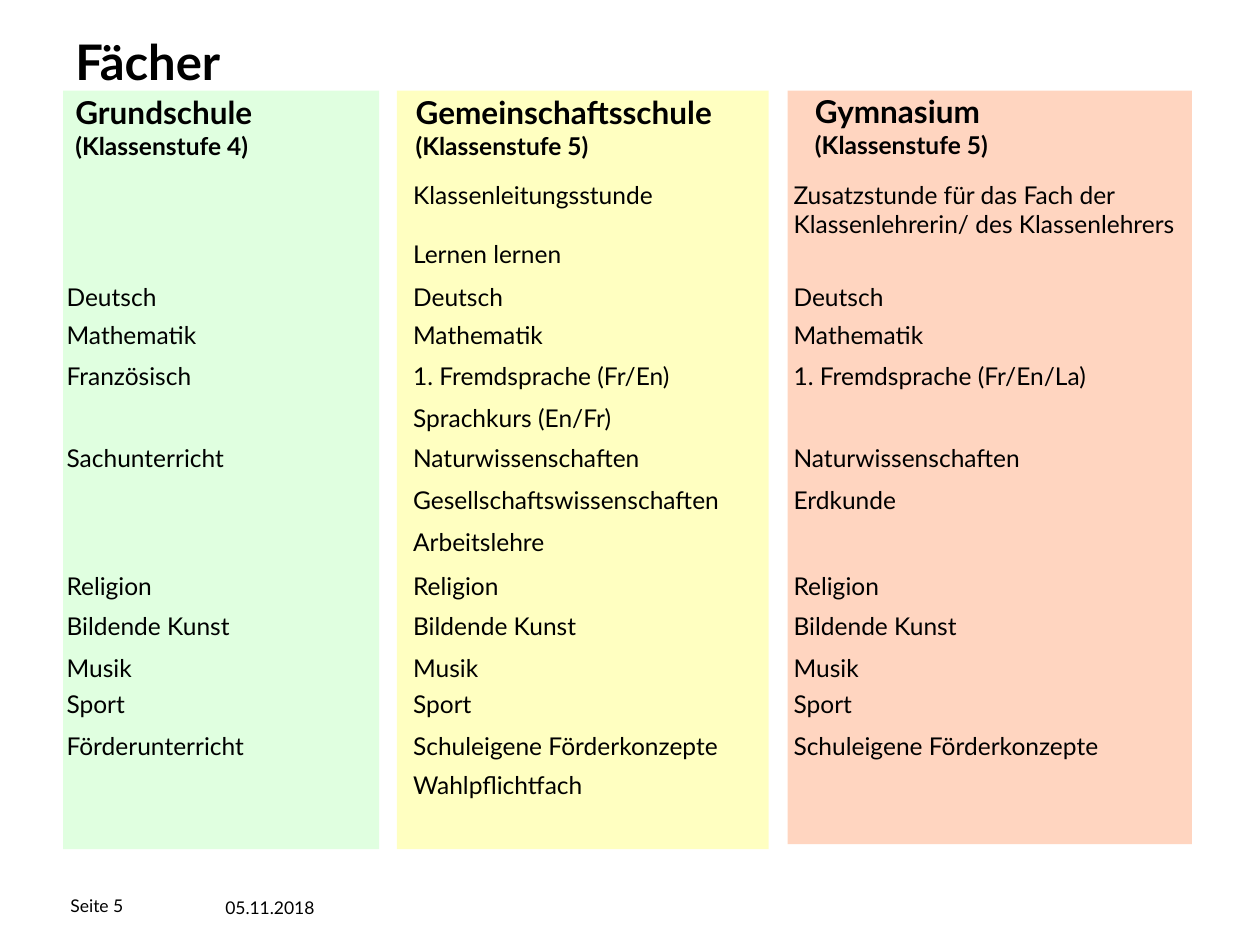
from lxml import etree
from pptx import Presentation
from pptx.dml.color import RGBColor
from pptx.enum.shapes import MSO_SHAPE
from pptx.enum.text import MSO_ANCHOR, MSO_AUTO_SIZE
from pptx.oxml.ns import qn
from pptx.util import Inches, Pt

RECTANGLE = MSO_SHAPE.RECTANGLE
TOP, MIDDLE = MSO_ANCHOR.TOP, MSO_ANCHOR.MIDDLE
FIT_TEXT = MSO_AUTO_SIZE.SHAPE_TO_FIT_TEXT

FONT = "Lato"
BLACK = RGBColor(0x00, 0x00, 0x00)
GREEN = RGBColor(0xCC, 0xFF, 0xCC)
YELLOW = RGBColor(0xFF, 0xFF, 0x99)
ORANGE = RGBColor(0xFF, 0xBA, 0x97)
PANEL_OPACITY = 60

# School, grade, colour, panel (left, top, width, height), heading (left, top, width)
SCHOOLS = [
    ("Grundschule", "(Klassenstufe 4)", GREEN, (0.5, 0.72, 2.51, 6.02), (0.5, 0.69, 1.74)),
    ("Gemeinschaftsschule", "(Klassenstufe 5)", YELLOW, (3.15, 0.72, 2.95, 6.02), (3.2, 0.69, 2.75)),
    ("Gymnasium", "(Klassenstufe 5)", ORANGE, (6.25, 0.72, 3.21, 5.98), (6.37, 0.68, 1.7)),
]

# Left edge and width of the subjects in each column
SUBJECT_COLUMNS = [(0.43, 2.46), (3.18, 3.05), (6.2, 3.3)]

# Top of each row, then the subject in each of the three schools
SUBJECT_ROWS = [
    (1.38, "", "Klassenleitungsstunde",
     "Zusatzstunde für das Fach der\nKlassenlehrerin/ des Klassenlehrers"),
    (1.85, "", "Lernen lernen", ""),
    (2.19, "Deutsch", "Deutsch", "Deutsch"),
    (2.49, "Mathematik", "Mathematik", "Mathematik"),
    (2.82, "Französisch", "1. Fremdsprache (Fr/En)", "1. Fremdsprache (Fr/En/La)"),
    (3.15, "", "Sprachkurs (En/Fr)", ""),
    (3.47, "Sachunterricht", "Naturwissenschaften", "Naturwissenschaften"),
    (3.8, "", "Gesellschaftswissenschaften", "Erdkunde"),
    (4.13, "", "Arbeitslehre", ""),
    (4.48, "Religion", "Religion", "Religion"),
    (4.8, "Bildende Kunst", "Bildende Kunst", "Bildende Kunst"),
    (5.13, "Musik", "Musik", "Musik"),
    (5.42, "Sport", "Sport", "Sport"),
    (5.75, "Förderunterricht", "Schuleigene Förderkonzepte", "Schuleigene Förderkonzepte"),
    (6.06, "", "Wahlpflichtfach", ""),
]


def add_panel(slide, color, bounds):
    panel = slide.shapes.add_shape(RECTANGLE, *map(Inches, bounds))
    panel.shadow.inherit = False
    panel.line.fill.background()
    panel.fill.solid()
    panel.fill.fore_color.rgb = color
    color_node = panel.fill._xPr.find(qn("a:solidFill"))[0]
    etree.SubElement(color_node, qn("a:alpha")).set("val", str(PANEL_OPACITY * 1000))


def add_text(slide, bounds, paragraphs, bold=False, anchor=TOP, grow=True):
    """Add a text box; paragraphs holds (text, size) pairs."""
    box = slide.shapes.add_textbox(*map(Inches, bounds))
    frame = box.text_frame
    frame.word_wrap = True
    frame.vertical_anchor = anchor
    if grow:
        frame.auto_size = FIT_TEXT
    for index, (text, size) in enumerate(paragraphs):
        para = frame.add_paragraph() if index else frame.paragraphs[0]
        for line_index, line in enumerate(text.split("\n")):
            if line_index:
                para.add_line_break()
            span = para.add_run()
            span.text = line
            span.font.name = FONT
            span.font.size = Pt(size)
            span.font.bold = bold
            span.font.color.rgb = BLACK
    return frame


def add_school(slide, name, grade, color, panel, heading):
    add_panel(slide, color, panel)
    add_text(slide, (*heading, 0.63), [(name, 18), (grade, 14)], bold=True)


def add_subjects(slide):
    for top, *subjects in SUBJECT_ROWS:
        for (left, width), subject in zip(SUBJECT_COLUMNS, subjects):
            if subject:
                height = 0.57 if "\n" in subject else 0.33
                add_text(slide, (left, top, width, height), [(subject, 14)])


def add_footer(slide):
    page = add_text(slide, (0.56, 7.07, 1.26, 0.24), [("Seite 5", 10)],
                    anchor=MIDDLE, grow=False)
    page.margin_left = page.margin_right = page.margin_top = page.margin_bottom = 0
    add_text(slide, (1.69, 7.07, 1.26, 0.24), [("05.11.2018", 10)], grow=False)


def main():
    deck = Presentation()
    deck.slide_width, deck.slide_height = Inches(10), Inches(7.5)
    slide = deck.slides.add_slide(deck.slide_layouts[6])
    for school in SCHOOLS:
        add_school(slide, *school)
    add_text(slide, (0.5, 0.2, 2.45, 0.57), [("Fächer", 28)], bold=True)
    add_subjects(slide)
    add_footer(slide)
    deck.save("out.pptx")


if __name__ == "__main__":
    main()
